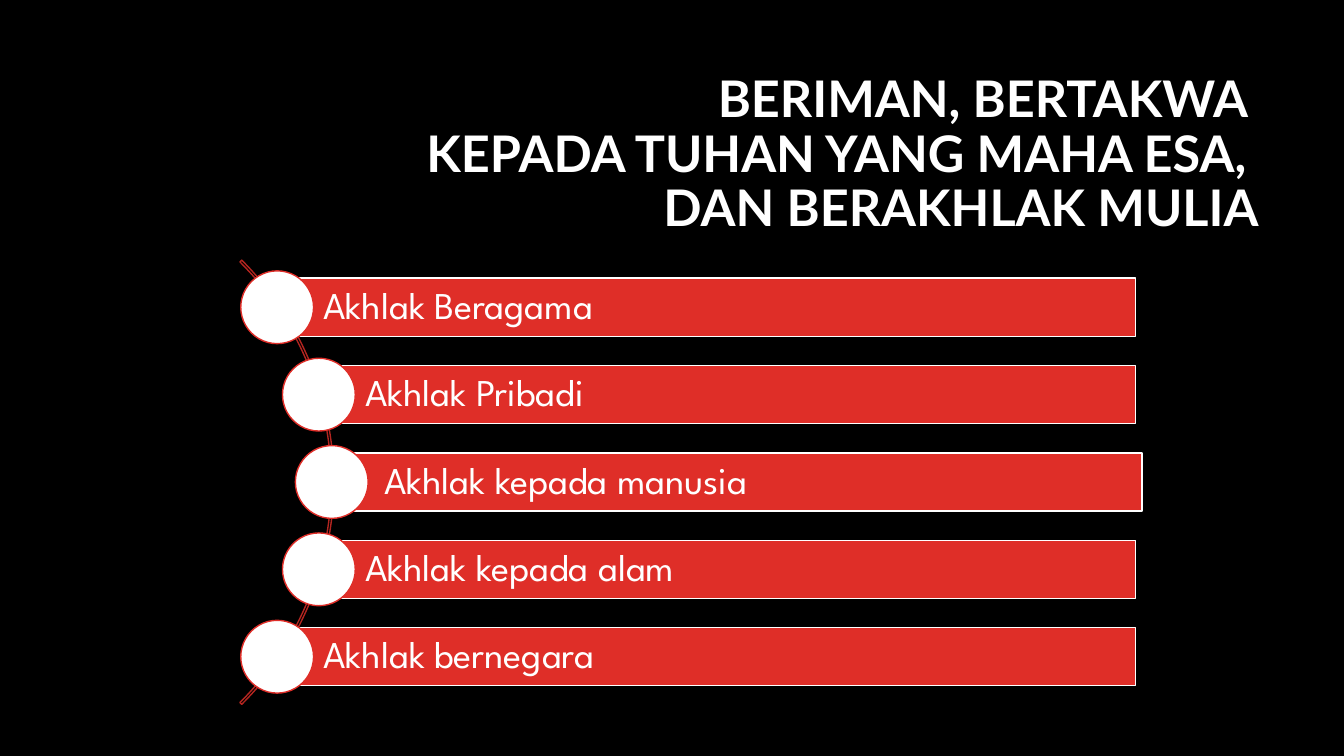
from dataclasses import dataclass

from pptx import Presentation
from pptx.dml.color import RGBColor
from pptx.enum.shapes import MSO_SHAPE
from pptx.enum.text import MSO_ANCHOR, MSO_AUTO_SIZE, PP_ALIGN
from pptx.shapes.autoshape import Shape
from pptx.shapes.shapetree import GroupShapes
from pptx.slide import Slide
from pptx.text.text import TextFrame
from pptx.util import Pt


@dataclass(frozen=True)
class Theme:
    background: RGBColor = RGBColor(0x00, 0x00, 0x00)
    white: RGBColor = RGBColor(0xFF, 0xFF, 0xFF)
    red: RGBColor = RGBColor(0xDF, 0x2E, 0x28)
    dark_red: RGBColor = RGBColor(0xB3, 0x25, 0x20)
    title_font: str = "Lato"
    body_font: str = "League Spartan"
    title_size: int = 36
    body_size: int = 27


@dataclass(frozen=True)
class Virtue:
    label: str
    circle_x: float
    bar_shift: float = 0


THEME = Theme()
TITLE = "BERIMAN, BERTAKWA \vKEPADA TUHAN YANG MAHA ESA, \vDAN BERAKHLAK MULIA"
VIRTUES = [
    Virtue("Akhlak Beragama", 198),
    Virtue("Akhlak Pribadi", 227.8),
    Virtue("Akhlak kepada manusia", 237, bar_shift=4.4),
    Virtue("Akhlak kepada alam", 227.8),
    Virtue("Akhlak bernegara", 198),
]
FIRST_ROW_Y = 219.5
ROW_STEP = 62.4
BAR_HEIGHT = 41.6
BAR_RIGHT = 811.2
CIRCLE_SIZE = 52
ARC_SIZE = 448.6


def outline(shape: Shape, color: RGBColor) -> None:
    shape.shadow.inherit = False
    shape.line.color.rgb = color
    shape.line.width = Pt(1)


def fill(shape: Shape, color: RGBColor) -> None:
    shape.fill.solid()
    shape.fill.fore_color.rgb = color


def write(frame: TextFrame, text: str, font: str, size: int,
          align: PP_ALIGN, bold: bool = False) -> None:
    frame.text = text
    frame.word_wrap = True
    frame.vertical_anchor = MSO_ANCHOR.MIDDLE
    para = frame.paragraphs[0]
    para.alignment = align
    para.line_spacing = 0.9
    for span in para.runs:
        span.font.name = font
        span.font.size = Pt(size)
        span.font.bold = bold
        span.font.color.rgb = THEME.white


def add_title(page: Slide) -> None:
    title = page.shapes.title
    title.left, title.top, title.width, title.height = Pt(228.2), Pt(60.5), Pt(678.2), Pt(101.5)
    title.text_frame.auto_size = MSO_AUTO_SIZE.NONE
    write(title.text_frame, TITLE, THEME.title_font, THEME.title_size, PP_ALIGN.RIGHT, bold=True)


def add_arc(shapes: GroupShapes) -> None:
    arc = shapes.add_shape(MSO_SHAPE.BLOCK_ARC, Pt(-210.2), Pt(120.2), Pt(ARC_SIZE), Pt(ARC_SIZE))
    # Angles are in 60,000ths of a degree, divided by 100,000: 315 and 45 degrees.
    for index, value in enumerate((189, 27, 0.004)):
        arc.adjustments[index] = value
    arc.fill.background()
    outline(arc, THEME.dark_red)


def add_virtue(shapes: GroupShapes, virtue: Virtue, center_y: float) -> None:
    bar = shapes.add_shape(
        MSO_SHAPE.RECTANGLE, Pt(virtue.circle_x + virtue.bar_shift), Pt(center_y - BAR_HEIGHT / 2),
        Pt(BAR_RIGHT - virtue.circle_x), Pt(BAR_HEIGHT))
    fill(bar, THEME.red)
    outline(bar, THEME.white)
    frame = bar.text_frame
    frame.margin_left = Pt(33)
    frame.margin_top = frame.margin_right = frame.margin_bottom = Pt(5)
    write(frame, virtue.label, THEME.body_font, THEME.body_size, PP_ALIGN.LEFT)

    circle = shapes.add_shape(
        MSO_SHAPE.OVAL, Pt(virtue.circle_x - CIRCLE_SIZE / 2), Pt(center_y - CIRCLE_SIZE / 2),
        Pt(CIRCLE_SIZE), Pt(CIRCLE_SIZE))
    fill(circle, THEME.white)
    outline(circle, THEME.red)


def main() -> None:
    deck = Presentation()
    deck.slide_width, deck.slide_height = Pt(960), Pt(540)
    page = deck.slides.add_slide(deck.slide_layouts.get_by_name("Title Only"))
    page.background.fill.solid()
    page.background.fill.fore_color.rgb = THEME.background
    add_title(page)
    diagram = page.shapes.add_group_shape().shapes
    add_arc(diagram)
    for row, virtue in enumerate(VIRTUES):
        add_virtue(diagram, virtue, FIRST_ROW_Y + row * ROW_STEP)
    deck.save("out.pptx")


if __name__ == "__main__":
    main()
